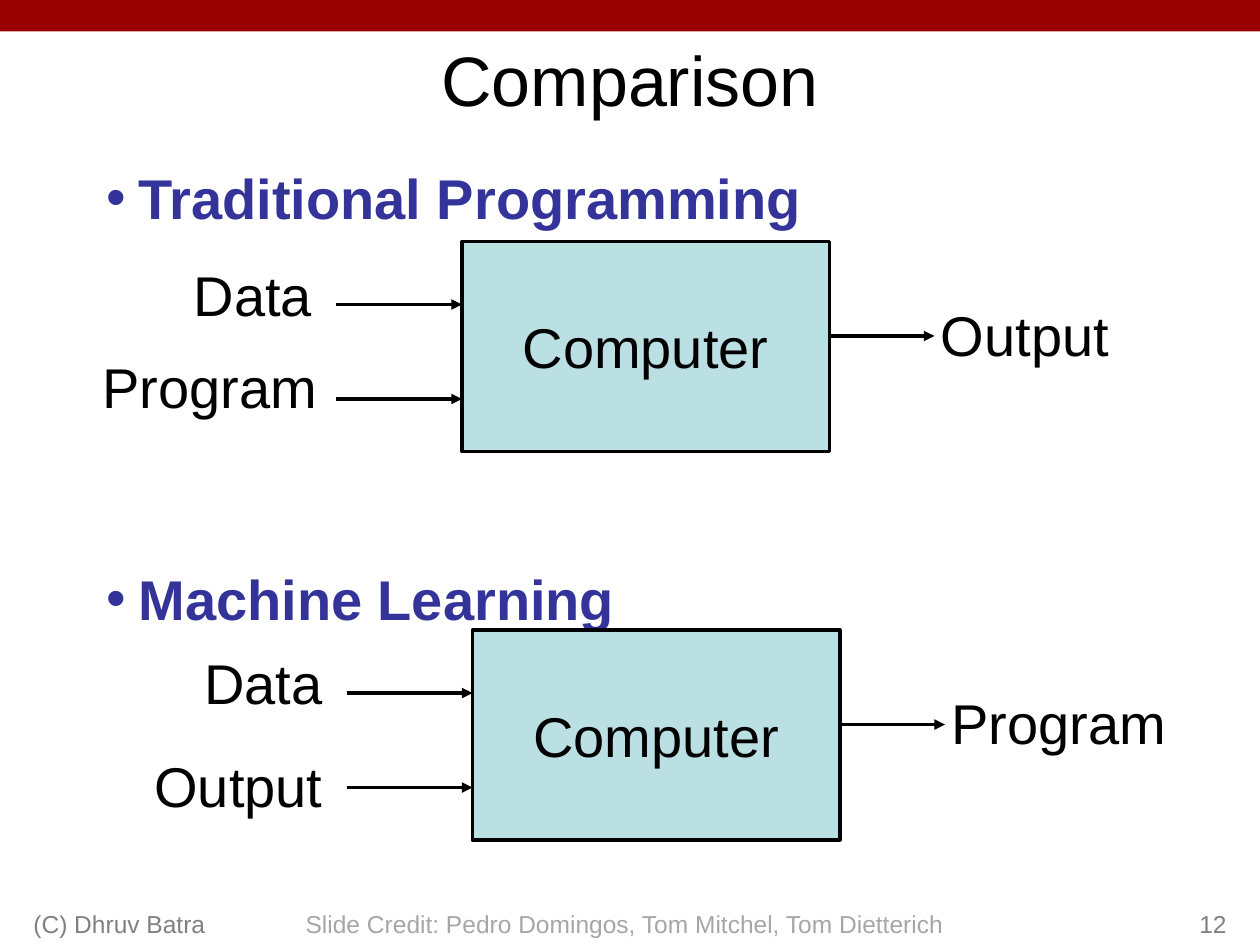
from pptx import Presentation
from pptx.dml.color import RGBColor
from pptx.enum.shapes import MSO_CONNECTOR, MSO_SHAPE
from pptx.enum.text import MSO_ANCHOR as Anchor, PP_ALIGN as Align
from pptx.oxml.ns import qn
from pptx.util import Pt
from lxml.etree import SubElement

FONT = "Arial"
WHITE = RGBColor(0xFF, 0xFF, 0xFF)
BLACK = RGBColor(0, 0, 0)
RED = RGBColor(0x99, 0, 0)
INDIGO = RGBColor(0x33, 0x33, 0x99)
PALE_TEAL = RGBColor(0xBB, 0xE0, 0xE3)
GREY = RGBColor(0x80, 0x80, 0x80)
LIGHT_GREY = RGBColor(0xA6, 0xA6, 0xA6)

TITLE = "Comparison"
HEADINGS = ["Traditional Programming", "Machine Learning"]
# Inputs: text, gap from label to computer, label top below computer top
DIAGRAMS = [
    {"left": 264, "top": 138, "output": "Output",
     "inputs": [("Data", 82, 7.3), ("Program", 79, 60)]},
    {"left": 270, "top": 360, "output": "Program",
     "inputs": [("Data", 82, 7.3), ("Output", 82, 66)]},
]
# Text, left, width, alignment, colour
FOOTERS = [
    ("(C) Dhruv Batra", 12, 228, Align.LEFT, GREY),
    ("Slide Credit: Pedro Domingos, Tom Mitchel, Tom Dietterich",
     138, 438, Align.CENTER, LIGHT_GREY),
    ("12", 558, 150, Align.RIGHT, GREY),
]

SLIDE_WIDTH, SLIDE_HEIGHT = 720, 540
COMPUTER_WIDTH, COMPUTER_HEIGHT = 210, 120
INPUT_ARROW_LENGTH, OUTPUT_ARROW_LENGTH = 72, 60
INPUT_ARROW_TOPS, OUTPUT_ARROW_TOP = (36, 90), 54
LABEL_WIDTH, LABEL_HEIGHT, LABEL_INSET = 140, 43.2, 3.6
OUTPUT_LABEL_TOP = 30
FOOTER_HEIGHT = 36
HEADING_GAP = 190.5


def format_text(paragraph, size, color, align=Align.LEFT, bold=False):
    paragraph.alignment = align
    font = paragraph.font
    font.name, font.size, font.bold = FONT, Pt(size), bold
    font.color.rgb = color


def add_text(slide, text, left, top, width, height, size, color, align):
    box = slide.shapes.add_textbox(Pt(left), Pt(top), Pt(width), Pt(height))
    frame = box.text_frame
    frame.word_wrap = True
    frame.text = text
    format_text(frame.paragraphs[0], size, color, align)
    return frame


def add_label(slide, text, left, top, align):
    frame = add_text(slide, text, left, top, LABEL_WIDTH, LABEL_HEIGHT, 32, BLACK, align)
    frame.margin_left = frame.margin_right = Pt(LABEL_INSET)


def add_rectangle(slide, left, top, width, height, fill):
    shape = slide.shapes.add_shape(
        MSO_SHAPE.RECTANGLE, Pt(left), Pt(top), Pt(width), Pt(height))
    shape.shadow.inherit = False
    shape.fill.solid()
    shape.fill.fore_color.rgb = fill
    shape.line.fill.background()
    return shape


def add_arrow(slide, left, top, length):
    arrow = slide.shapes.add_connector(
        MSO_CONNECTOR.STRAIGHT, Pt(left), Pt(top), Pt(left + length), Pt(top))
    arrow.line.color.rgb = BLACK
    arrow.line.width = Pt(2)
    SubElement(arrow.line._get_or_add_ln(), qn("a:tailEnd"), type="triangle")
    SubElement(arrow._element.spPr, qn("a:effectLst"))


def add_headings(slide):
    frame = add_text(slide, "\n".join(HEADINGS), 54, 90, 612, 414, 32, INDIGO, Align.LEFT)
    for index, paragraph in enumerate(frame.paragraphs):
        properties = paragraph._p.get_or_add_pPr()
        properties.set("marL", str(Pt(18)))
        properties.set("indent", str(-Pt(18)))
        SubElement(properties, qn("a:buFont"), typeface=FONT)
        SubElement(properties, qn("a:buChar"), char="•")
        format_text(paragraph, 32, INDIGO, bold=True)
        if index:
            paragraph.space_before = Pt(HEADING_GAP)


def add_diagram(slide, left, top, inputs, output):
    computer = add_rectangle(slide, left, top, COMPUTER_WIDTH, COMPUTER_HEIGHT, PALE_TEAL)
    computer.line.color.rgb = BLACK
    computer.line.width = Pt(2)
    computer.text_frame.text = "Computer"
    computer.text_frame.vertical_anchor = Anchor.MIDDLE
    format_text(computer.text_frame.paragraphs[0], 32, BLACK, Align.CENTER)

    for (text, gap, label_top), arrow_top in zip(inputs, INPUT_ARROW_TOPS):
        add_label(slide, text, left - gap - LABEL_WIDTH, top + label_top, Align.RIGHT)
        add_arrow(slide, left - INPUT_ARROW_LENGTH, top + arrow_top, INPUT_ARROW_LENGTH)

    right = left + COMPUTER_WIDTH
    add_arrow(slide, right, top + OUTPUT_ARROW_TOP, OUTPUT_ARROW_LENGTH)
    add_label(slide, output, right + OUTPUT_ARROW_LENGTH, top + OUTPUT_LABEL_TOP, Align.LEFT)


def main():
    presentation = Presentation()
    presentation.slide_width = Pt(SLIDE_WIDTH)
    presentation.slide_height = Pt(SLIDE_HEIGHT)
    slide = presentation.slides.add_slide(presentation.slide_layouts.get_by_name("Title Only"))
    slide.background.fill.solid()
    slide.background.fill.fore_color.rgb = WHITE

    add_rectangle(slide, 0, 0, SLIDE_WIDTH, 18, RED)
    title = slide.shapes.title
    title.left, title.top, title.width, title.height = Pt(54), Pt(18), Pt(612), Pt(54)
    title.text_frame.text = TITLE
    title.text_frame.vertical_anchor = Anchor.MIDDLE
    format_text(title.text_frame.paragraphs[0], 40, BLACK, Align.CENTER)

    add_headings(slide)
    for diagram in DIAGRAMS:
        add_diagram(slide, **diagram)
    for text, left, width, align, color in FOOTERS:
        frame = add_text(slide, text, left, SLIDE_HEIGHT - FOOTER_HEIGHT,
                         width, FOOTER_HEIGHT, 14, color, align)
        frame.vertical_anchor = Anchor.BOTTOM

    presentation.save("out.pptx")


if __name__ == "__main__":
    main()
